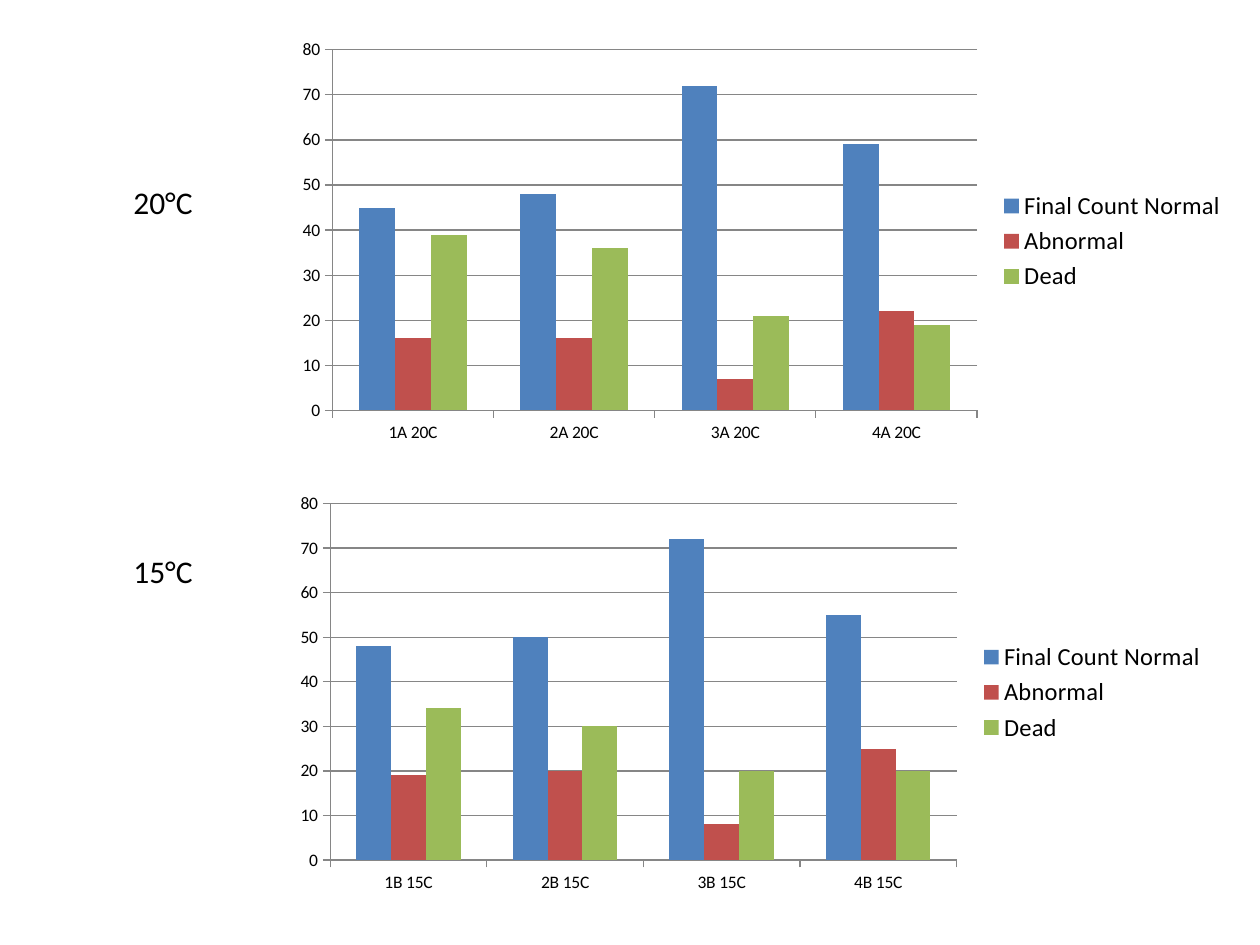
from dataclasses import dataclass
from typing import Optional

from lxml.etree import SubElement
from pptx import Presentation
from pptx.chart.data import CategoryChartData as ChartData
from pptx.dml.color import RGBColor as Rgb
from pptx.enum.chart import XL_CHART_TYPE as ChartType
from pptx.enum.chart import XL_LEGEND_POSITION as LegendPosition
from pptx.enum.chart import XL_TICK_MARK as TickMark
from pptx.enum.text import MSO_AUTO_SIZE as AutoSize
from pptx.oxml.ns import qn
from pptx.util import Inches, Pt


@dataclass(frozen=True)
class Theme:
    font: str = "Calibri"
    text: str = "000000"
    rule: str = "868686"
    bars: tuple[str, ...] = ("4F81BD", "C0504D", "9BBB59")
    label_size: int = 18
    legend_size: int = 14
    axis_size: int = 10
    rule_width: float = 0.75


@dataclass(frozen=True)
class Box:
    left: float
    top: float
    width: float
    height: float

    def lengths(self) -> tuple:
        return tuple(map(Inches, (self.left, self.top, self.width, self.height)))


@dataclass(frozen=True)
class Trial:
    temperature: str
    label_box: Box
    chart_box: Box
    samples: tuple[str, ...]
    counts: tuple[tuple[int, ...], ...]  # one row per outcome
    plot_area: Optional[Box] = None  # fractions of the chart


THEME = Theme()
OUTCOMES = ("Final Count Normal", "Abnormal", "Dead")
TRIALS = (
    Trial("20°C", Box(0.96, 1.4, 1.25, 0.4), Box(2.25, 0.25, 7.58, 3.33),
          ("1A 20C", "2A 20C", "3A 20C", "4A 20C"),
          ((45, 48, 72, 59), (16, 16, 7, 22), (39, 36, 21, 19))),
    Trial("15°C", Box(0.96, 4.33, 0.75, 0.42), Box(2.25, 3.83, 7.42, 3.33),
          ("1B 15C", "2B 15C", "3B 15C", "4B 15C"),
          ((48, 50, 72, 55), (19, 20, 8, 25), (34, 30, 20, 20)),
          Box(0.05, 0.05, 0.67, 0.85)),
)


def style_font(font, size: int) -> None:
    font.name = THEME.font
    font.size = Pt(size)
    font.color.rgb = Rgb.from_string(THEME.text)


def style_rule(line) -> None:
    line.color.rgb = Rgb.from_string(THEME.rule)
    line.width = Pt(THEME.rule_width)


def add_text(slide, text: str, box: Box, *, size: int) -> None:
    frame = slide.shapes.add_textbox(*box.lengths()).text_frame
    frame.word_wrap = True
    frame.auto_size = AutoSize.SHAPE_TO_FIT_TEXT
    run = frame.paragraphs[0].add_run()
    run.text = text
    style_font(run.font, size)


def place_plot(chart, area: Box) -> None:
    """Fix the inner plot area as fractions of the chart."""
    plot = chart.element.find(".//" + qn("c:plotArea"))
    for automatic in plot.findall(qn("c:layout")):
        plot.remove(automatic)
    layout = SubElement(plot, qn("c:layout"))
    plot.insert(0, layout)
    manual = SubElement(layout, qn("c:manualLayout"))
    settings = (("layoutTarget", "inner"), ("xMode", "edge"), ("yMode", "edge"),
                ("x", area.left), ("y", area.top),
                ("w", area.width), ("h", area.height))
    for tag, value in settings:
        SubElement(manual, qn(f"c:{tag}")).set("val", str(value))


def add_count_chart(slide, trial: Trial) -> None:
    counts = ChartData(number_format="General")
    counts.categories = trial.samples
    for outcome, values in zip(OUTCOMES, trial.counts):
        counts.add_series(outcome, values)
    chart = slide.shapes.add_chart(
        ChartType.COLUMN_CLUSTERED, *trial.chart_box.lengths(), counts).chart
    chart.has_title = False
    style_font(chart.font, THEME.axis_size)

    # Bars
    bars = chart.plots[0]
    bars.gap_width = 150
    bars.vary_by_categories = False
    for series, color in zip(bars.series, THEME.bars):
        series.format.fill.solid()
        series.format.fill.fore_color.rgb = Rgb.from_string(color)

    # Axes and gridlines
    for axis in (chart.category_axis, chart.value_axis):
        axis.major_tick_mark = TickMark.OUTSIDE
        axis.minor_tick_mark = TickMark.NONE
        style_rule(axis.format.line)
    scale = chart.value_axis
    scale.minimum_scale, scale.maximum_scale, scale.major_unit = 0, 80, 10
    scale.has_major_gridlines = True
    style_rule(scale.major_gridlines.format.line)

    # Legend
    chart.has_legend = True
    chart.legend.position = LegendPosition.RIGHT
    chart.legend.include_in_layout = False
    style_font(chart.legend.font, THEME.legend_size)

    if trial.plot_area:
        place_plot(chart, trial.plot_area)


def main() -> None:
    deck = Presentation()
    deck.slide_width, deck.slide_height = Inches(10), Inches(7.5)
    slide = deck.slides.add_slide(deck.slide_layouts[6])
    # Charts behind, temperature labels in front
    for trial in TRIALS:
        add_count_chart(slide, trial)
    for trial in TRIALS:
        add_text(slide, trial.temperature, trial.label_box, size=THEME.label_size)
    deck.save("out.pptx")


if __name__ == "__main__":
    main()
